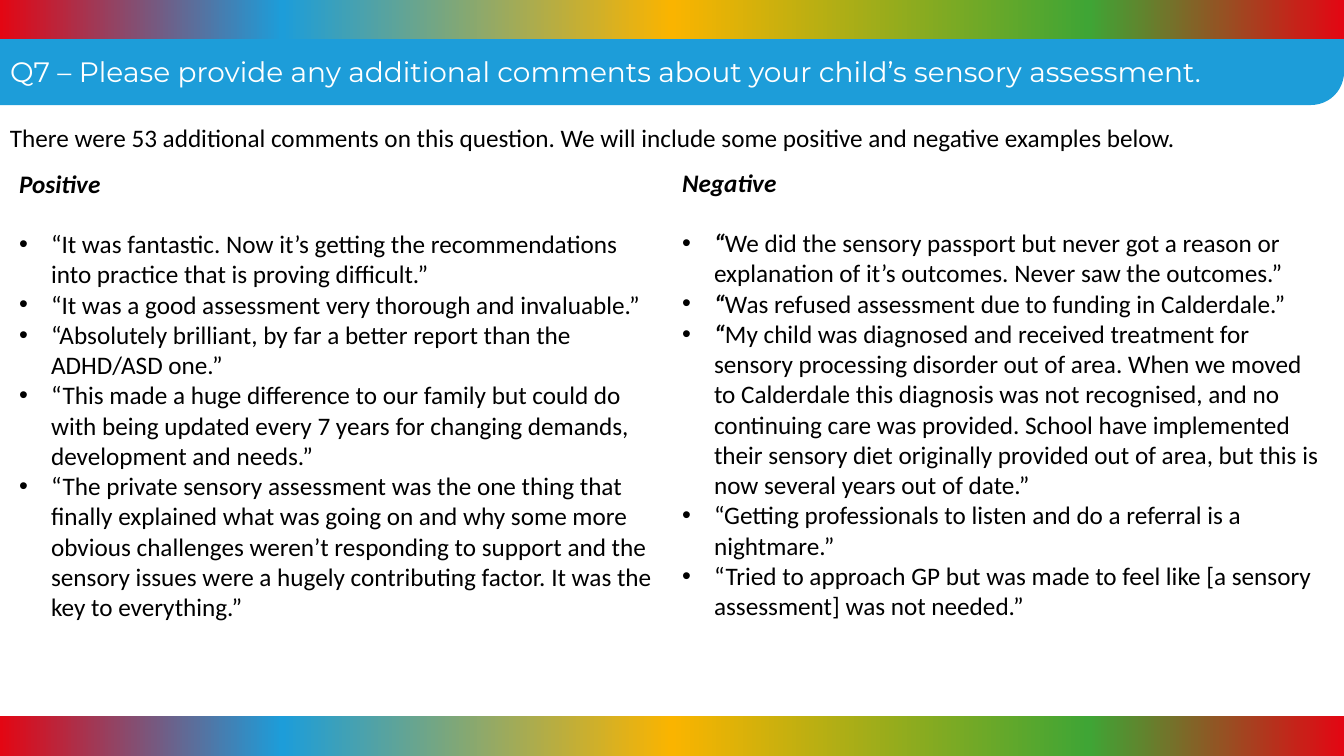
from lxml import etree
from pptx import Presentation
from pptx.dml.color import RGBColor
from pptx.enum.shapes import MSO_SHAPE
from pptx.enum.text import MSO_ANCHOR, MSO_AUTO_SIZE, PP_ALIGN
from pptx.oxml.ns import qn
from pptx.util import Emu, Pt

TITLE = "Q7 – Please provide any additional comments about your child’s sensory assessment."
INTRO = ("There were 53 additional comments on this question. "
         "We will include some positive and negative examples below.")
COLUMNS = [
    {"heading": "Positive", "left": 9, "top": 163, "comments": [
        ("", "“It was fantastic. Now it’s getting the recommendations into practice "
             "that is proving difficult.”"),
        ("", "“It was a good assessment very thorough and invaluable.”"),
        ("", "“Absolutely brilliant, by far a better report than the ADHD/ASD one.”"),
        ("", "“This made a huge difference to our family but could do with being updated "
             "every 7 years for changing demands, development and needs.”"),
        ("", "“The private sensory assessment was the one thing that finally explained what "
             "was going on and why some more obvious challenges weren’t responding to support "
             "and the sensory issues were a hugely contributing factor. "
             "It was the key to everything.”"),
    ]},
    {"heading": "Negative", "left": 672, "top": 162, "comments": [
        ("“", "We did the sensory passport but never got a reason or explanation of it’s "
              "outcomes. Never saw the outcomes.”"),
        ("“", "Was refused assessment due to funding in Calderdale.”"),
        ("“", "My child was diagnosed and received treatment for sensory processing disorder "
              "out of area. When we moved to Calderdale this diagnosis was not recognised, and "
              "no continuing care was provided. School have implemented their sensory diet "
              "originally provided out of area, but this is now several years out of date.”"),
        ("", "“Getting professionals to listen and do a referral is a nightmare.”"),
        ("", "“Tried to approach GP but was made to feel like [a sensory assessment] "
             "was not needed.”"),
    ]},
]

RED = RGBColor(0xE3, 0x06, 0x13)
BLUE = RGBColor(0x1D, 0x9D, 0xD9)
AMBER = RGBColor(0xFA, 0xB4, 0x00)
GREEN = RGBColor(0x3F, 0xA5, 0x35)
WHITE = RGBColor(0xFF, 0xFF, 0xFF)
BLACK = RGBColor(0x00, 0x00, 0x00)
RAINBOW = [(0, RED), (21, BLUE), (50, AMBER), (81, GREEN), (100, RED)]

BANNER_SHAPE = MSO_SHAPE.ROUND_1_RECTANGLE
STRIPE_SHAPE = MSO_SHAPE.RECTANGLE
ANCHOR_TOP = MSO_ANCHOR.TOP
FIXED_SIZE = MSO_AUTO_SIZE.NONE
ALIGN_LEFT = PP_ALIGN.LEFT

SCALE = 914400 / 100.8
WIDTH, HEIGHT = 1344, 756
STRIPE_HEIGHT = 40
COLUMN_WIDTH, COLUMN_HEIGHT = 663, 499
BULLET_INDENT = 32
HEADING_GAP = Pt(21.6)
TWO_CONTENT_LAYOUT = 3


def px(length):
    return Emu(round(length * SCALE))


def place(shape, left, top, width, height):
    shape.left, shape.top = px(left), px(top)
    shape.width, shape.height = px(width), px(height)


def prepare_frame(shape):
    frame = shape.text_frame
    frame.word_wrap = True
    frame.auto_size = FIXED_SIZE
    frame.vertical_anchor = ANCHOR_TOP
    return frame


def write(paragraph, text, size=18, font="Calibri", color=BLACK, emphasis=False):
    paragraph.alignment = ALIGN_LEFT
    paragraph.line_spacing = 1.0
    paragraph.space_before = Pt(0)
    run = paragraph.add_run()
    run.text = text
    run.font.size = Pt(size)
    run.font.name = font
    run.font.color.rgb = color
    run.font.bold = run.font.italic = emphasis


def set_bullet(paragraph, bullet):
    properties = paragraph._p.get_or_add_pPr()
    indent = px(BULLET_INDENT) if bullet else 0
    properties.set("marL", str(indent))
    properties.set("indent", str(-indent))
    if bullet:
        etree.SubElement(properties, qn("a:buFont"), typeface="Arial")
        etree.SubElement(properties, qn("a:buChar"), char=bullet)
    else:
        etree.SubElement(properties, qn("a:buNone"))


def add_band(slide, kind, top, height):
    band = slide.shapes.add_shape(kind, 0, px(top), px(WIDTH), px(height))
    band.shadow.inherit = False
    band.line.fill.background()
    slide.shapes.title.element.addprevious(band.element)
    return band


def fill_rainbow(shape):
    shape.fill.gradient()
    shape.fill.gradient_angle = 0
    stops = shape.element.spPr.find(qn("a:gradFill")).find(qn("a:gsLst"))
    for stop in list(stops):
        stops.remove(stop)
    for percent, color in RAINBOW:
        stop = etree.SubElement(stops, qn("a:gs"), pos=str(percent * 1000))
        etree.SubElement(stop, qn("a:srgbClr"), val=str(color))


def fill_column(placeholder, column):
    place(placeholder, column["left"], column["top"], COLUMN_WIDTH, COLUMN_HEIGHT)
    frame = prepare_frame(placeholder)
    heading = frame.paragraphs[0]
    write(heading, column["heading"], emphasis=True)
    heading.space_after = HEADING_GAP
    set_bullet(heading, None)
    for lead, comment in column["comments"]:
        paragraph = frame.add_paragraph()
        if lead:
            write(paragraph, lead, emphasis=True)
        write(paragraph, comment)
        set_bullet(paragraph, "•")


def main():
    presentation = Presentation()
    presentation.slide_width, presentation.slide_height = px(WIDTH), px(HEIGHT)
    slide = presentation.slides.add_slide(presentation.slide_layouts[TWO_CONTENT_LAYOUT])

    banner = add_band(slide, BANNER_SHAPE, 39, 66)
    banner.adjustments[0] = 0.5
    banner.rotation = 180
    banner.element.spPr.xfrm.set("flipH", "1")
    banner.fill.solid()
    banner.fill.fore_color.rgb = BLUE
    for top in (-1, HEIGHT - STRIPE_HEIGHT):
        fill_rainbow(add_band(slide, STRIPE_SHAPE, top, STRIPE_HEIGHT))

    title = slide.shapes.title
    place(title, 0, 49, WIDTH, 44)
    write(prepare_frame(title).paragraphs[0], TITLE, size=20, font="Montserrat", color=WHITE)

    intro = slide.shapes.add_textbox(0, px(117), px(WIDTH), px(40))
    write(prepare_frame(intro).paragraphs[0], INTRO)

    for index, column in enumerate(COLUMNS, start=1):
        fill_column(slide.placeholders[index], column)

    presentation.save("out.pptx")


if __name__ == "__main__":
    main()
